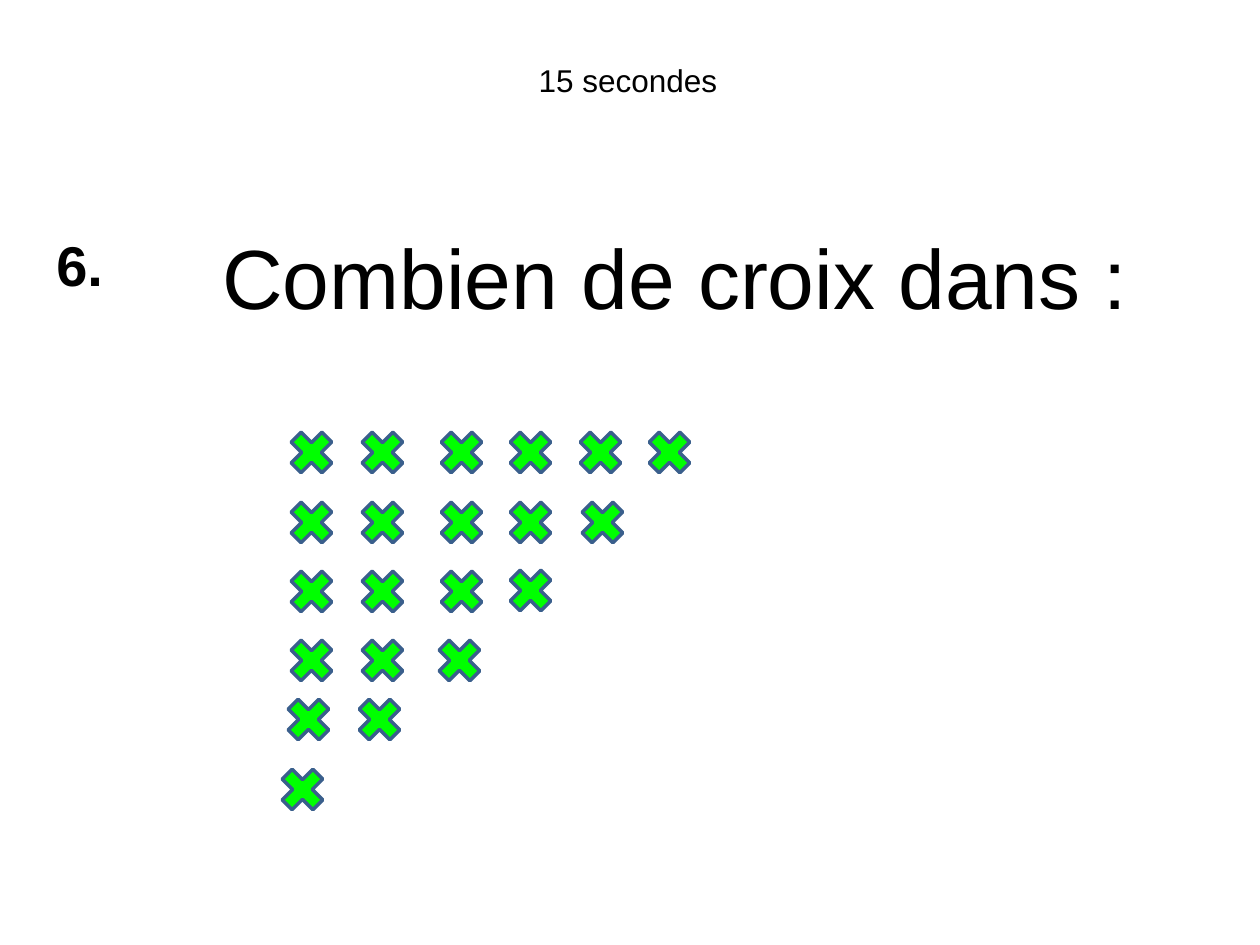
"""Build a quiz slide asking how many crosses a triangular pattern holds."""
from pptx import Presentation
from pptx.dml.color import RGBColor
from pptx.enum.shapes import MSO_SHAPE
from pptx.enum.text import MSO_ANCHOR, MSO_AUTO_SIZE, PP_ALIGN
from pptx.util import Emu, Pt

CROSS = MSO_SHAPE.MATH_MULTIPLY
TOP = MSO_ANCHOR.TOP
FIT_SHAPE = MSO_AUTO_SIZE.SHAPE_TO_FIT_TEXT
LEFT, CENTER = PP_ALIGN.LEFT, PP_ALIGN.CENTER
PX = 914400 / 126


def box(*lengths):
    return [Emu(round(length * PX)) for length in lengths]


def color(value):
    return RGBColor.from_string(value)


prs = Presentation()
prs.slide_width, prs.slide_height = box(1260, 945)
slide = prs.slides.add_slide(prs.slide_layouts[5])

question = slide.shapes.title
question.left, question.top, question.width, question.height = box(144, 219, 1062, 115)
number = slide.shapes.add_textbox(*box(44, 224, 100, 81))
duration = slide.shapes.add_textbox(*box(441, 55, 374, 50))

for label, text, size, bold, align in (
    (question, "Combien de croix dans :", 48, False, CENTER),
    (number, "6.", 32, True, LEFT),
    (duration, "15 secondes", 18, False, CENTER),
):
    frame = label.text_frame
    frame.text = text
    frame.word_wrap = True
    frame.auto_size = FIT_SHAPE
    frame.vertical_anchor = TOP
    paragraph = frame.paragraphs[0]
    paragraph.alignment = align
    font = paragraph.runs[0].font
    font.name = "Arial"
    font.size = Pt(size)
    font.bold = bold
    font.color.rgb = color("000000")

cross_size = 59
column_lefts = [282, 353, 432, 501, 571, 640]
row_tops = [423, 493, 562, 631, 690, 760]
nudges = {(1, 4): (2, 0), (2, 3): (0, -1), (3, 2): (-2, 0),
          (4, 0): (-3, 0), (4, 1): (-3, 0), (5, 0): (-9, 0)}

for row, top in enumerate(row_tops):
    for column, left in enumerate(column_lefts[:len(column_lefts) - row]):
        dx, dy = nudges.get((row, column), (0, 0))
        cross = slide.shapes.add_shape(
            CROSS, *box(left + dx, top + dy, cross_size, cross_size))
        cross.shadow.inherit = False
        cross.fill.solid()
        cross.fill.fore_color.rgb = color("00FF00")
        cross.line.color.rgb = color("3A5F8C")
        cross.line.width = Pt(2)

prs.save("out.pptx")
